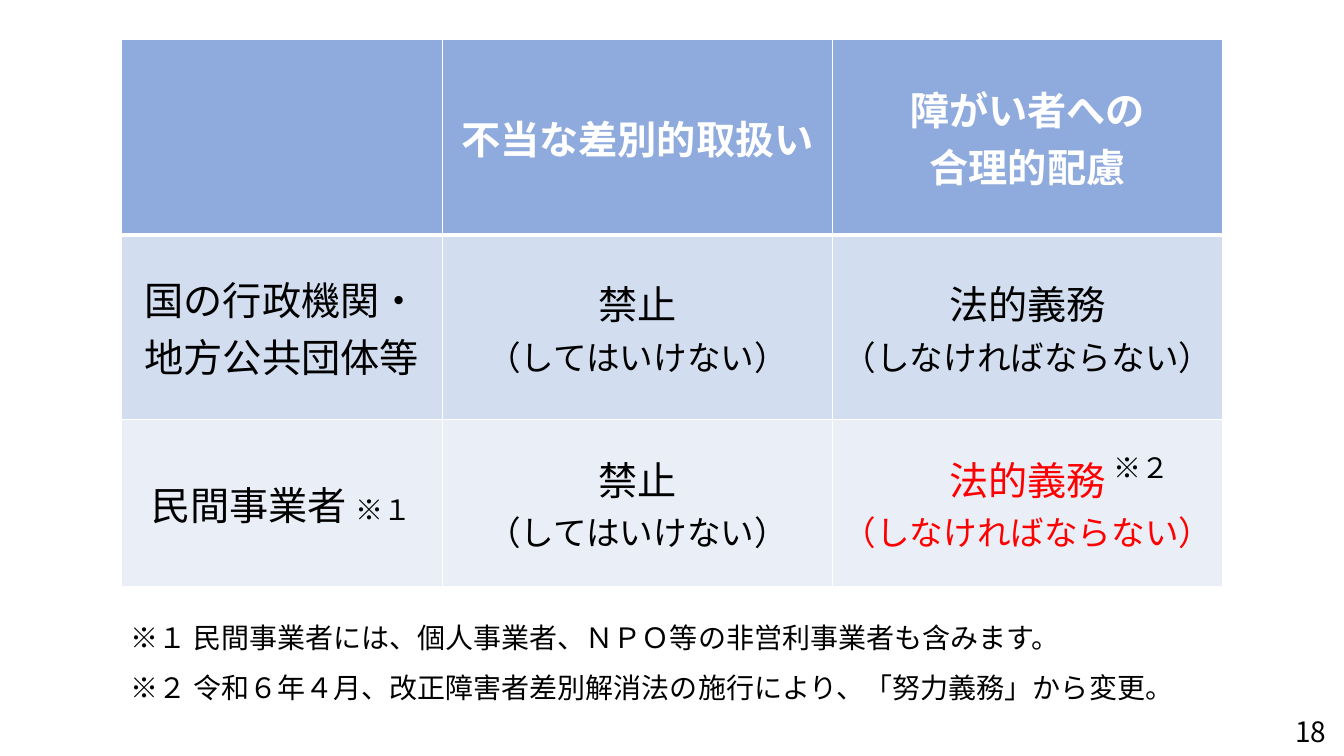
from pptx import Presentation
from pptx import oxml
from pptx import util as u
from pptx.dml import color
from pptx.enum import text
from pptx.oxml import ns

Pt = u.Pt
FONT = "Noto Sans CJK JP"
HUES = {"head": "8FAADC", "odd": "D2DEEF", "even": "EAEFF7",
        "white": "FFFFFF", "black": "000000", "red": "FF0000"}


def write(frame, paras, align=None, space=None):
    for i, runs in enumerate(paras):
        para = frame.paragraphs[0] if i == 0 else frame.add_paragraph()
        para.alignment = align
        para.line_spacing = space
        for words, size, hue, bold in runs:
            run = para.add_run()
            run.text = words
            run.font.size = Pt(size)
            run.font.bold = bold
            run.font.name = FONT
            run.font.color.rgb = color.RGBColor.from_string(HUES[hue])
            east = oxml.parse_xml(f'<a:ea {ns.nsdecls("a")} typeface="{FONT}"/>')
            run.font._element.append(east)


def edge(cell, side, width):
    line = oxml.parse_xml(
        f'<a:ln{side} {ns.nsdecls("a")} w="{Pt(width)}"><a:solidFill>'
        f'<a:srgbClr val="{HUES["white"]}"/></a:solidFill></a:ln{side}>')
    cell._tc.get_or_add_tcPr().append(line)


deck = Presentation()
deck.slide_width, deck.slide_height = Pt(960), Pt(540)
slide = deck.slides.add_slide(deck.slide_layouts[6])

ban = [[("禁止", 28, "black", False)], [("（してはいけない）", 24, "black", False)]]
duty = [[[("法的義務", 28, hue, False)], [("（しなければならない）", 24, hue, False)]]
        for hue in ("black", "red")]
rows = [
    ("head", 139.7, [
        [],
        [[("不当な差別的取扱い", 28, "white", True)]],
        [[("障がい者への", 28, "white", True)], [("合理的配慮", 28, "white", True)]]]),
    ("odd", 131.8, [
        [[("国の行政機関・地方公共団体等", 28, "black", False)]], ban, duty[0]]),
    ("even", 119.5, [
        [[("民間事業者 ", 28, "black", False), ("※１", 20, "black", False)]],
        ban, duty[1]]),
]

grid = slide.shapes.add_table(3, 3, Pt(86.4), Pt(28.1), Pt(787), Pt(391)).table
for col, width in zip(grid.columns, (229.6, 278.7, 278.7)):
    col.width = Pt(width)
for r, (fill, height, cells) in enumerate(rows):
    grid.rows[r].height = Pt(height)
    for c, paras in enumerate(cells):
        cell = grid.cell(r, c)
        cell.vertical_anchor = text.MSO_ANCHOR.MIDDLE
        for side in "LRTB":
            thick = (r, side) in ((0, "B"), (1, "T"))
            edge(cell, side, 3 if thick else 1)
        cell.fill.solid()
        cell.fill.fore_color.rgb = color.RGBColor.from_string(HUES[fill])
        write(cell.text_frame, paras, text.PP_ALIGN.CENTER)

notes = ["※１ 民間事業者には、個人事業者、ＮＰＯ等の非営利事業者も含みます。",
         "※２ 令和６年４月、改正障害者差別解消法の施行により、「努力義務」から変更。"]
boxes = [
    (86.4, 427.7, 742.3, 79.9, notes, True, 1.5),
    (788.4, 318.2, 54.7, 31.7, ["※２"], False, None),
    (918, 506.9, 41, 31.7, ["18"], False, None),
]
for left, top, width, height, lines, wrap, space in boxes:
    box = slide.shapes.add_textbox(Pt(left), Pt(top), Pt(width), Pt(height))
    box.text_frame.word_wrap = wrap
    box.text_frame.auto_size = text.MSO_AUTO_SIZE.SHAPE_TO_FIT_TEXT
    write(box.text_frame, [[(line, 20, "black", False)] for line in lines], space=space)

deck.save("out.pptx")
